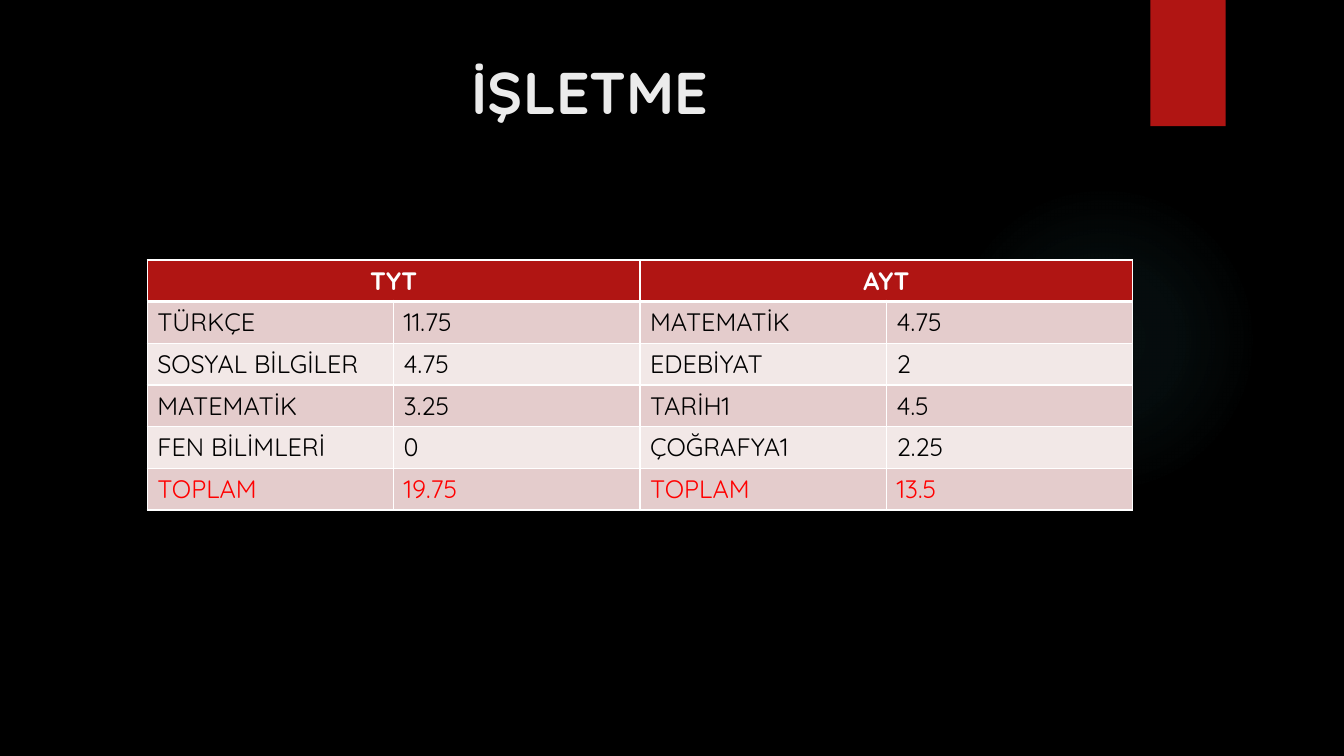
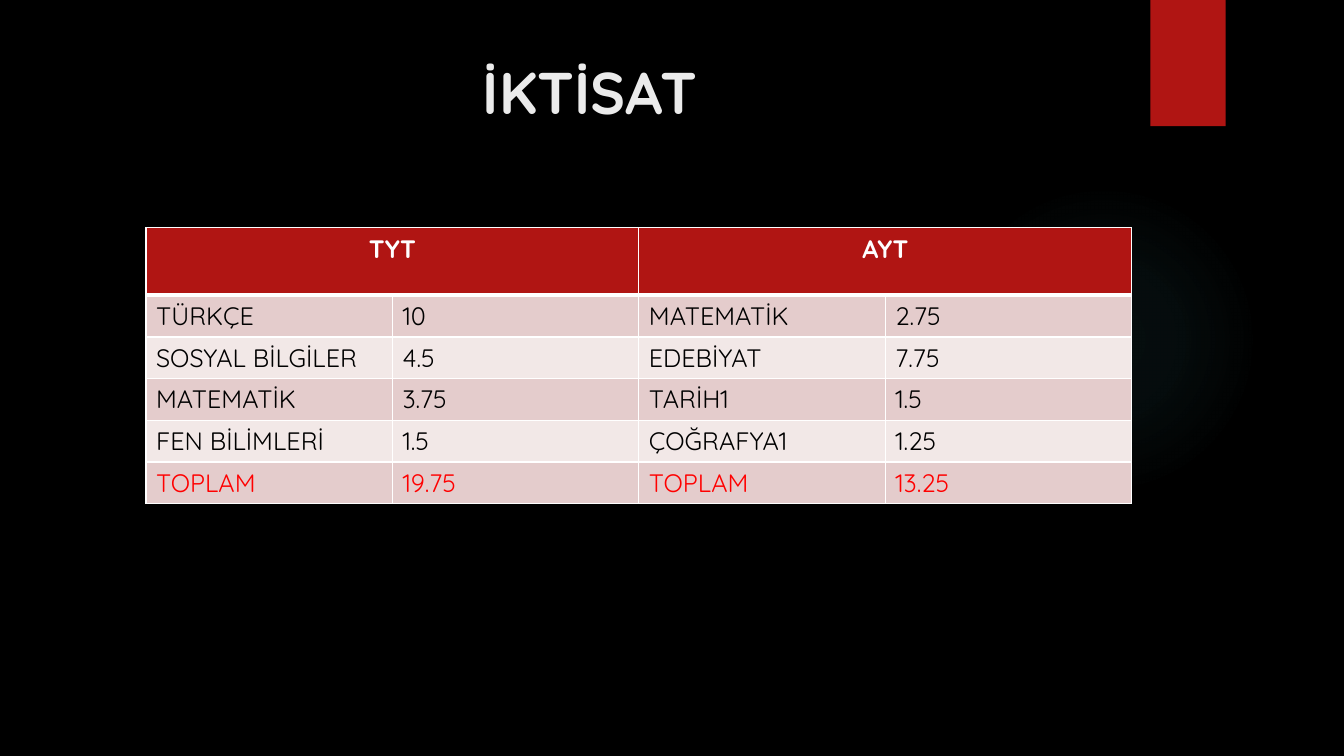
import pptx
import pptx.dml.color
import pptx.enum.shapes
import pptx.enum.text
import pptx.oxml
import pptx.oxml.ns
import pptx.util

Cm = pptx.util.Cm
Pt = pptx.util.Pt
Rgb = pptx.dml.color.RGBColor.from_string
Shape = pptx.enum.shapes.MSO_SHAPE
Align = pptx.enum.text.PP_ALIGN

hues = {
    "back": "000000",
    "glow": "50B9C1",
    "red": "B01513",
    "title": "EBEBEB",
    "white": "FFFFFF",
    "dark": "E4CCCC",
    "light": "F2E8E7",
    "text": "000000",
    "total": "FF0000",
}
fonts = {
    "title": {"name": "Quicksand", "size": Pt(42), "bold": True},
    "head": {"name": "Quicksand", "size": Pt(18), "bold": True},
    "body": {"name": "Quicksand", "size": Pt(18), "bold": False},
}
space = pptx.oxml.ns.nsdecls("a")

heads = ["TYT", "AYT"]
names = [
    ["TÜRKÇE", "SOSYAL BİLGİLER", "MATEMATİK", "FEN BİLİMLERİ", "TOPLAM"],
    ["MATEMATİK", "EDEBİYAT", "TARİH1", "ÇOĞRAFYA1", "TOPLAM"],
]
pages = [
    {
        "title": "İŞLETME", "left": 3.71, "top": 6.55, "head": 1.05,
        "marks": [["11.75", "4.75", "3.25", "0", "19.75"],
                  ["4.75", "2", "4.5", "2.25", "13.5"]],
    },
    {
        "title": "İKTİSAT", "left": 3.68, "top": 5.74, "head": 1.7,
        "marks": [["10", "4.5", "3.75", "1.5", "19.75"],
                  ["2.75", "7.75", "1.5", "1.25", "13.25"]],
    },
]
wide, high = 6.21, 1.05


def write(frame, text, look, hue, align):
    para = frame.paragraphs[0]
    para.alignment = align
    run = para.add_run()
    run.text = text
    for key, value in fonts[look].items():
        setattr(run.font, key, value)
    run.font.color.rgb = Rgb(hues[hue])


def paint(cell, hue, upper, lower):
    cell.fill.solid()
    cell.fill.fore_color.rgb = Rgb(hues[hue])
    edges = {"lnL": 1, "lnR": 1, "lnT": upper, "lnB": lower}
    props = cell._tc.get_or_add_tcPr()
    for spot, (tag, width) in enumerate(edges.items()):
        props.insert(spot, pptx.oxml.parse_xml(
            f'<a:{tag} {space} w="{Pt(width)}"><a:solidFill>'
            f'<a:srgbClr val="{hues["white"]}"/></a:solidFill></a:{tag}>'))


deck = pptx.Presentation()
deck.slide_width = Cm(33.87)
deck.slide_height = Cm(19.05)
back = deck.slide_master.background.fill
back.solid()
back.fore_color.rgb = Rgb(hues["back"])

stops = "".join(
    f'<a:gs pos="{place * 1000}"><a:srgbClr val="{hues["glow"]}">'
    f'<a:alpha val="{alpha * 1000}"/></a:srgbClr></a:gs>'
    for place, alpha in [(0, 7), (36, 6), (69, 0), (100, 0)])
blend = (f'<a:gradFill {space}><a:gsLst>{stops}</a:gsLst><a:path path="circle">'
         '<a:fillToRect l="50000" t="50000" r="50000" b="50000"/>'
         '</a:path></a:gradFill>')

for page in pages:
    slide = deck.slides.add_slide(deck.slide_layouts[6])
    shapes = slide.shapes

    glow = shapes.add_shape(Shape.OVAL, Cm(23.9), Cm(4.65), Cm(7.82), Cm(7.82))
    glow.fill.background()
    props = glow._element.spPr
    props.replace(props.find(pptx.oxml.ns.qn("a:noFill")),
                  pptx.oxml.parse_xml(blend))

    band = shapes.add_shape(Shape.RECTANGLE, Cm(28.99), 0, Cm(1.9), Cm(3.18))
    band.fill.solid()
    band.fill.fore_color.rgb = Rgb(hues["red"])
    for part in (glow, band):
        part.line.fill.background()
        part.shadow.inherit = False

    title = shapes.add_textbox(Cm(1.8), Cm(1.27), Cm(26.14), Cm(3.89))
    title.text_frame.word_wrap = True
    write(title.text_frame, page["title"], "title", "title", Align.CENTER)

    rows = len(names[0]) + 1
    table = shapes.add_table(
        rows, 4, Cm(page["left"]), Cm(page["top"]), Cm(wide * 4),
        Cm(page["head"] + high * (rows - 1))).table
    for col in table.columns:
        col.width = Cm(wide)
    for row in table.rows:
        row.height = Cm(high)
    table.rows[0].height = Cm(page["head"])

    for row in range(rows):
        hue = "red" if row == 0 else "dark" if row % 2 else "light"
        for col in range(4):
            paint(table.cell(row, col), hue,
                  3 if row == 1 else 1, 3 if row == 0 else 1)

    for half, head in enumerate(heads):
        left = half * 2
        cell = table.cell(0, left)
        cell.merge(table.cell(0, left + 1))
        write(cell.text_frame, head, "head", "white", Align.CENTER)
        pairs = zip(names[half], page["marks"][half])
        for row, pair in enumerate(pairs, 1):
            hue = "total" if row == rows - 1 else "text"
            for step, text in enumerate(pair):
                write(table.cell(row, left + step).text_frame,
                      text, "body", hue, Align.LEFT)

deck.save("out.pptx")
